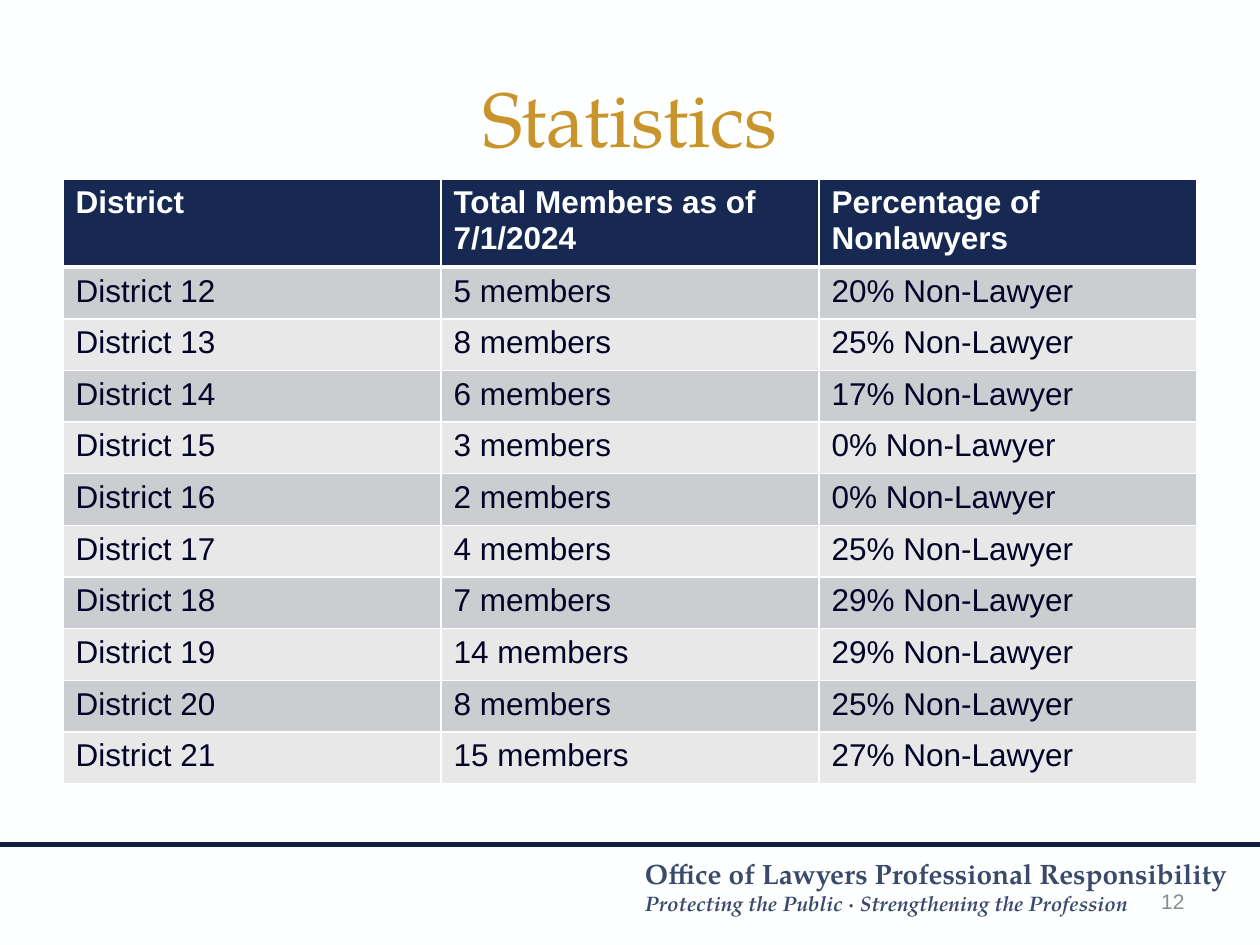
from pptx import Presentation
from pptx.dml.color import RGBColor
from pptx.enum.shapes import MSO_CONNECTOR as Connector, MSO_SHAPE as Shape
from pptx.enum.text import MSO_ANCHOR as Anchor, PP_ALIGN as Align
from pptx.oxml.ns import qn
from pptx.util import Inches, Pt
from lxml.etree import SubElement

SERIF, SANS = "TeX Gyre Pagella", "Arial"
WHITE, NAVY, RULE, INK = "FEFFFF", "172852", "111E3E", "030327"
BANDS = ["CCCDD1", "E8E8E9"]

TITLE = "Statistics"
HEADERS = ["District", "Total Members as of 7/1/2024", "Percentage of Nonlawyers"]
DISTRICTS = [
    (12, 5, 20), (13, 8, 25), (14, 6, 17), (15, 3, 0), (16, 2, 0),
    (17, 4, 25), (18, 7, 29), (19, 14, 29), (20, 8, 25), (21, 15, 27),
]
FOOTER = [
    ("Office of Lawyers Professional Responsibility", {"size": 16, "bold": True}),
    ("Protecting the Public · Strengthening the Profession",
     {"size": 12, "bold": True, "italic": True}),
]
PAGE_NUMBER = "12"

COLUMN_WIDTH, HEADER_HEIGHT, ROW_HEIGHT = 3, 0.66, 0.41


def rgb(value):
    return RGBColor.from_string(value)


def inches(*values):
    return [Inches(value) for value in values]


def paint(target, color):
    target.fill.solid()
    target.fill.fore_color.rgb = rgb(color)


def write(paragraph, text, name, color, align=Align.LEFT, **formats):
    paragraph.alignment = align
    run = paragraph.add_run()
    run.text = text
    run.font.name = name
    run.font.color.rgb = rgb(color)
    formats["size"] = Pt(formats["size"])
    for key, value in formats.items():
        setattr(run.font, key, value)


def set_borders(cell, bottom_width, top_width):
    properties = cell._tc.get_or_add_tcPr()
    widths = {"a:lnL": 1, "a:lnR": 1, "a:lnT": top_width, "a:lnB": bottom_width}
    for position, (tag, width) in enumerate(widths.items()):
        line = SubElement(properties, qn(tag), w=str(Pt(width)))
        fill = SubElement(line, qn("a:solidFill"))
        SubElement(fill, qn("a:srgbClr"), val=WHITE)
        properties.insert(position, line)


def add_footer(slide):
    band = slide.shapes.add_shape(Shape.RECTANGLE, *inches(-0.02, 6.7, 10.02, 0.8))
    band.shadow.inherit = False
    paint(band, WHITE)
    band.line.fill.background()

    rule = slide.shapes.add_connector(Connector.STRAIGHT, *inches(-0.02, 6.7, 10, 6.7))
    rule.line.color.rgb = rgb(RULE)
    rule.line.width = Pt(3)
    SubElement(rule._element.spPr, qn("a:effectLst"))

    frame = slide.shapes.add_textbox(*inches(5.02, 6.75, 5.15, 0.84)).text_frame
    frame.word_wrap = True
    for index, (text, formats) in enumerate(FOOTER):
        paragraph = frame.add_paragraph() if index else frame.paragraphs[0]
        write(paragraph, text, SERIF, "3B4A6C", **formats)


def add_title(slide):
    title = slide.shapes.title
    title.left, title.top, title.width, title.height = inches(0.5, 0.3, 9, 1.25)
    title.text_frame.vertical_anchor = Anchor.MIDDLE
    write(title.text_frame.paragraphs[0], TITLE, SERIF, "C8942B", Align.CENTER, size=44)


def add_district_table(slide):
    rows = [HEADERS] + [
        (f"District {district}", f"{members} members", f"{percent}% Non-Lawyer")
        for district, members, percent in DISTRICTS
    ]
    width = COLUMN_WIDTH * len(HEADERS)
    height = HEADER_HEIGHT + ROW_HEIGHT * len(DISTRICTS)
    table = slide.shapes.add_table(
        len(rows), len(HEADERS), *inches(0.5, 1.42, width, height)).table
    for column in table.columns:
        column.width = Inches(COLUMN_WIDTH)
    for r, values in enumerate(rows):
        header = r == 0
        table.rows[r].height = Inches(HEADER_HEIGHT if header else ROW_HEIGHT)
        for c, text in enumerate(values):
            cell = table.cell(r, c)
            paint(cell, NAVY if header else BANDS[(r - 1) % 2])
            set_borders(cell, 3 if header else 1, 3 if r == 1 else 1)
            write(cell.text_frame.paragraphs[0], text, SANS,
                  WHITE if header else INK, size=18, bold=header)


def add_page_number(slide):
    frame = slide.shapes.add_textbox(*inches(7.17, 6.95, 2.33, 0.4)).text_frame
    frame.word_wrap = True
    frame.vertical_anchor = Anchor.MIDDLE
    write(frame.paragraphs[0], PAGE_NUMBER, SANS, "8C8C8E", Align.RIGHT, size=12)


def main():
    presentation = Presentation()
    presentation.slide_width, presentation.slide_height = inches(10, 7.5)
    slide = presentation.slides.add_slide(presentation.slide_layouts[5])
    paint(slide.background, WHITE)
    add_footer(slide)
    add_title(slide)
    add_district_table(slide)
    add_page_number(slide)
    presentation.save("out.pptx")


if __name__ == "__main__":
    main()
